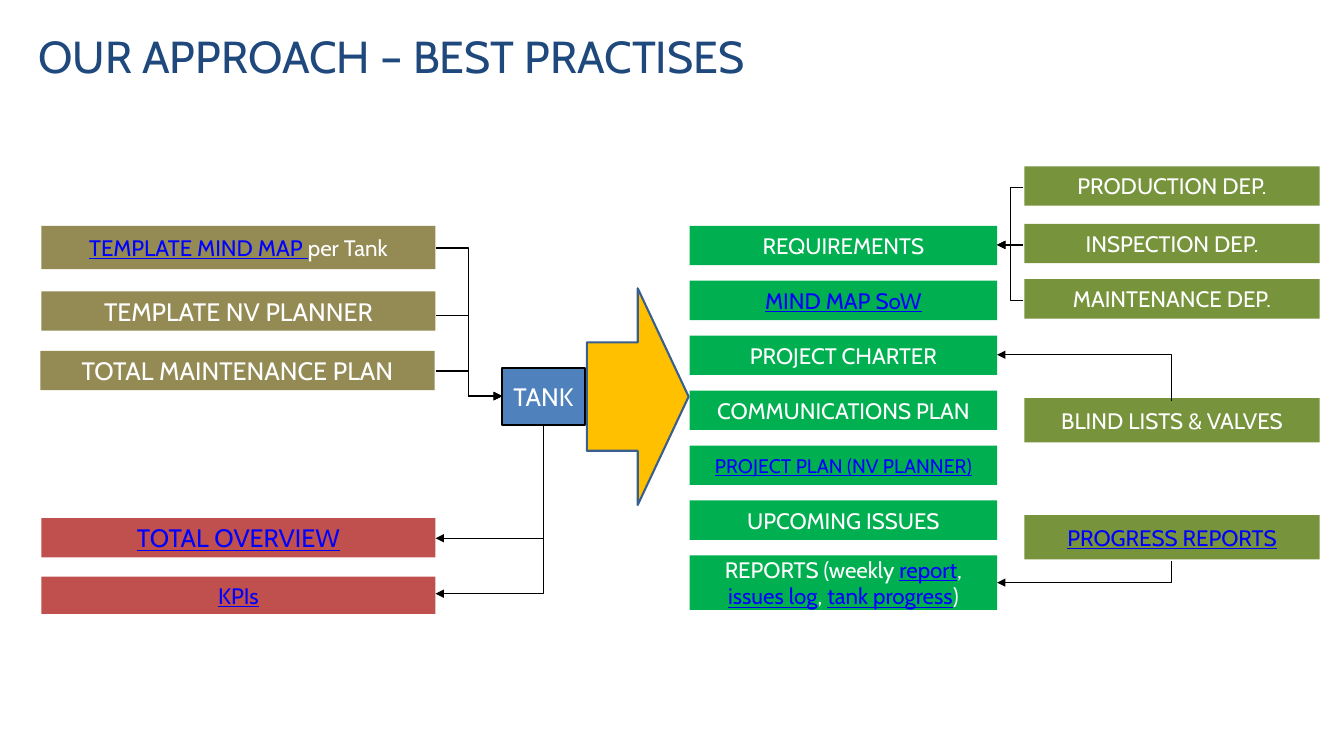
"""Build the tank maintenance best-practices flow slide."""
from dataclasses import dataclass

from lxml import etree
from pptx import Presentation
from pptx.dml.color import RGBColor
from pptx.enum.shapes import MSO_CONNECTOR, MSO_SHAPE
from pptx.enum.text import MSO_ANCHOR, MSO_AUTO_SIZE, PP_ALIGN
from pptx.oxml.ns import qn
from pptx.shapes.autoshape import Shape
from pptx.slide import Slide
from pptx.util import Inches, Pt

RECT, ARROW = MSO_SHAPE.RECTANGLE, MSO_SHAPE.RIGHT_ARROW
ELBOW = MSO_CONNECTOR.ELBOW
MIDDLE, FIXED = MSO_ANCHOR.MIDDLE, MSO_AUTO_SIZE.NONE
LEFT, CENTER = PP_ALIGN.LEFT, PP_ALIGN.CENTER

FONT = "Cabin"
NAVY = RGBColor(0x1F, 0x49, 0x7D)
BLUE = RGBColor(0x4F, 0x81, 0xBD)
STEEL = RGBColor(0x3A, 0x5F, 0x8C)
GREEN = RGBColor(0x00, 0xB0, 0x50)
OLIVE = RGBColor(0x77, 0x93, 0x3C)
TAN = RGBColor(0x94, 0x8A, 0x54)
RED = RGBColor(0xC0, 0x50, 0x4D)
GOLD = RGBColor(0xFF, 0xC0, 0x00)
LINK = RGBColor(0x00, 0x00, 0xFF)
WHITE = RGBColor(0xFF, 0xFF, 0xFF)
BLACK = RGBColor(0x00, 0x00, 0x00)


@dataclass
class Box:
    """A filled shape; text between bars is styled as a link."""
    text: str
    left: float
    top: float
    width: float
    height: float
    fill: RGBColor
    size: int = 16
    edge: RGBColor | None = None
    kind: MSO_SHAPE = RECT


@dataclass
class Link:
    """An elbow line; a corner line has one bend and its arrow at the start."""
    left: float
    top: float
    right: float
    end: float
    corner: bool = False


STEPS = [
    ("REQUIREMENTS", 16, 0.39),
    ("|MIND MAP SoW|", 16, 0.39),
    ("PROJECT CHARTER", 16, 0.39),
    ("COMMUNICATIONS PLAN", 16, 0.39),
    ("|PROJECT PLAN (NV PLANNER)|", 14, 0.39),
    ("UPCOMING ISSUES", 16, 0.39),
    ("REPORTS (weekly |report|, |issues log|, |tank progress|)", 16, 0.54),
]
SIDES = [
    ("PRODUCTION DEP.", 1.65, 0.39),
    ("INSPECTION DEP.", 2.22, 0.39),
    ("MAINTENANCE DEP.", 2.77, 0.39),
    ("BLIND LISTS & VALVES", 3.95, 0.44),
    ("|PROGRESS REPORTS|", 5.11, 0.44),
]
BOXES = [
    Box("TANK", 4.98, 3.65, 0.82, 0.57, BLUE, 18, BLACK),
    Box("|TEMPLATE MIND MAP |per Tank", 0.41, 2.24, 3.91, 0.43, TAN),
    Box("TEMPLATE NV PLANNER", 0.41, 2.89, 3.91, 0.39, TAN, 18),
    Box("TOTAL MAINTENANCE PLAN", 0.4, 3.48, 3.91, 0.39, TAN, 18),
    Box("|TOTAL OVERVIEW|", 0.41, 5.14, 3.91, 0.39, RED, 18),
    Box("|KPIs|", 0.41, 5.72, 3.91, 0.37, RED),
    Box("", 5.82, 2.86, 1.01, 2.15, GOLD, edge=STEEL, kind=ARROW),
    *(Box(text, 6.84, 2.24 + 0.545 * row, 3.05, height, GREEN, size)
      for row, (text, size, height) in enumerate(STEPS)),
    *(Box(text, 10.16, top, 2.93, height, OLIVE)
      for text, top, height in SIDES),
]
LINKS = [
    *(Link(4.32, top, 4.98, 3.93) for top in (2.46, 3.13, 3.68)),
    *(Link(10.15, top, 9.89, 2.43) for top in (1.86, 2.43, 2.98)),
    Link(9.89, 3.52, 11.62, 3.98, True),
    Link(9.89, 5.78, 11.62, 5.57, True),
    Link(4.32, 5.34, 5.39, 4.22, True),
    Link(4.32, 5.89, 5.39, 4.22, True),
]


def write(shape: Shape, text: str, size: int) -> None:
    """Fill a shape with centred plain and link runs."""
    frame = shape.text_frame
    frame.word_wrap = True
    frame.vertical_anchor = MIDDLE
    line = frame.paragraphs[0]
    line.alignment = CENTER
    for index, part in enumerate(text.split("|")):
        if not part:
            continue
        is_link = index % 2 == 1
        run = line.add_run()
        run.text = part
        run.font.name = FONT
        run.font.size = Pt(size)
        run.font.underline = is_link
        run.font.color.rgb = LINK if is_link else WHITE


def add_box(slide: Slide, box: Box) -> None:
    """Draw one box with its text."""
    shape = slide.shapes.add_shape(
        box.kind, Inches(box.left), Inches(box.top),
        Inches(box.width), Inches(box.height))
    shape.shadow.inherit = False
    shape.fill.solid()
    shape.fill.fore_color.rgb = box.fill
    if box.edge is None:
        shape.line.fill.background()
    else:
        shape.line.color.rgb = box.edge
        shape.line.width = Pt(1.5)
    if box.text:
        write(shape, box.text, box.size)


def add_link(slide: Slide, link: Link) -> None:
    """Draw one elbow line with its arrowhead."""
    line = slide.shapes.add_connector(
        ELBOW, Inches(link.left), Inches(link.top),
        Inches(link.right), Inches(link.end))
    line.line.color.rgb = BLACK
    line.line.width = Pt(1)
    props = line._element.spPr
    if link.corner:
        props.find(qn("a:prstGeom")).set("prst", "bentConnector2")
    tip = "a:headEnd" if link.corner else "a:tailEnd"
    etree.SubElement(props.find(qn("a:ln")), qn(tip), type="triangle")
    etree.SubElement(props, qn("a:effectLst"))


def add_title(slide: Slide) -> None:
    """Place and format the slide title."""
    title = slide.shapes.title
    title.left, title.top = Inches(0.28), Inches(0.19)
    title.width, title.height = Inches(9.4), Inches(0.73)
    frame = title.text_frame
    frame.text = "OUR APPROACH – BEST PRACTISES"
    frame.auto_size = FIXED
    frame.vertical_anchor = MIDDLE
    line = frame.paragraphs[0]
    line.alignment = LEFT
    font = line.runs[0].font
    font.name, font.size = FONT, Pt(32)
    font.color.rgb = NAVY


def main() -> None:
    """Build and save the deck."""
    deck = Presentation()
    deck.slide_width, deck.slide_height = Inches(13.33), Inches(7.5)
    slide = deck.slides.add_slide(deck.slide_layouts[5])
    add_title(slide)
    for box in BOXES:
        add_box(slide, box)
    for link in LINKS:
        add_link(slide, link)
    deck.save("out.pptx")


if __name__ == "__main__":
    main()
